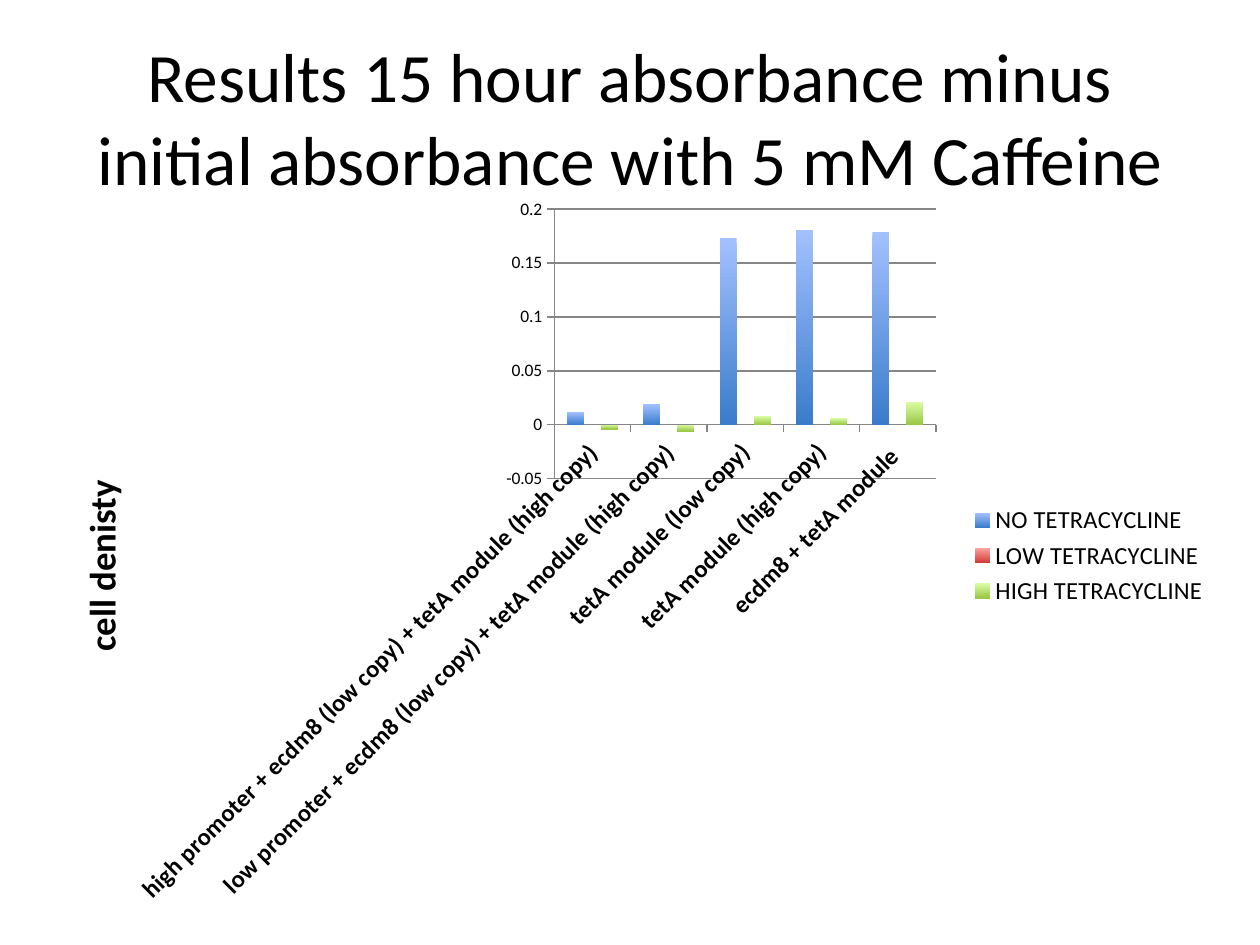
from lxml import etree
from pptx import Presentation
from pptx.chart.data import CategoryChartData
from pptx.dml.color import RGBColor
from pptx.enum.chart import XL_CHART_TYPE, XL_LEGEND_POSITION, XL_TICK_MARK
from pptx.enum.text import MSO_ANCHOR, MSO_AUTO_SIZE, PP_ALIGN
from pptx.oxml.ns import qn
from pptx.util import Inches, Pt

COLUMN = XL_CHART_TYPE.COLUMN_CLUSTERED
RIGHT = XL_LEGEND_POSITION.RIGHT
OUT = XL_TICK_MARK.OUTSIDE
MIDDLE = MSO_ANCHOR.MIDDLE
FIXED = MSO_AUTO_SIZE.NONE
CENTER = PP_ALIGN.CENTER

BLACK = RGBColor(0x00, 0x00, 0x00)
GRAY = RGBColor(0x86, 0x86, 0x86)
FONT = "Calibri"

# Chart frame, plot and axis title, in inches on the slide
LEFT, TOP, WIDTH, HEIGHT = 0.32, 1.55, 9.37, 5.72
PLOT = (4.4, 1.66, 3.03, 2.14)
LABEL = (0.55, 3.69)

CATS = [
    "high promoter + ecdm8 (low copy) + tetA module (high copy)",
    "low promoter + ecdm8 (low copy) + tetA module (high copy)",
    "tetA module (low copy)",
    "tetA module (high copy)",
    "ecdm8 + tetA module ",
]
# Name, values, top and bottom colour of the columns
SERIES = [
    ("NO TETRACYCLINE", (0.012, 0.019, 0.173, 0.181, 0.179),
     RGBColor(0xA3, 0xC1, 0xFF), RGBColor(0x3A, 0x7C, 0xCB)),
    ("LOW TETRACYCLINE", (0, 0, 0, 0, 0),
     RGBColor(0xFF, 0xA2, 0xA0), RGBColor(0xCE, 0x3B, 0x37)),
    ("HIGH TETRACYCLINE", (-0.004, -0.006, 0.008, 0.006, 0.021),
     RGBColor(0xDA, 0xFD, 0xA4), RGBColor(0x9A, 0xC7, 0x46)),
]


def write(frame, text, size, bold=False, align=CENTER):
    para = frame.paragraphs[0]
    para.alignment = align
    run = para.add_run()
    run.text = text
    style(run.font, size, bold)


def style(font, size, bold=False):
    font.name = FONT
    font.size = Pt(size)
    font.bold = bold
    font.color.rgb = BLACK


prs = Presentation()
prs.slide_width, prs.slide_height = Inches(10), Inches(7.5)
slide = prs.slides.add_slide(prs.slide_layouts[5])

# Title
title = slide.shapes.title
title.left, title.top = Inches(0.5), Inches(0.3)
title.width, title.height = Inches(9), Inches(1.25)
frame = title.text_frame
frame.word_wrap = True
frame.auto_size = FIXED
frame.vertical_anchor = MIDDLE
write(frame, "Results 15 hour absorbance minus initial absorbance "
      "with 5 mM Caffeine", 39.6)

# Chart
data = CategoryChartData()
data.categories = CATS
for name, vals, top, base in SERIES:
    data.add_series(name, vals)
chart = slide.shapes.add_chart(COLUMN, Inches(LEFT), Inches(TOP),
                               Inches(WIDTH), Inches(HEIGHT), data).chart
style(chart.font, 10)
chart.has_title = False

# Columns
plot = chart.plots[0]
plot.gap_width = 150
plot.overlap = 0
plot.vary_by_categories = False
for series, (name, vals, top, base) in zip(plot.series, SERIES):
    series.invert_if_negative = False
    fill = series.format.fill
    fill.gradient()
    fill.gradient_angle = 270
    for stop, color, place in zip(fill.gradient_stops, (top, base), (0, 1)):
        stop.color.rgb = color
        stop.position = place

# Axes
cat, val = chart.category_axis, chart.value_axis
for axis in (cat, val):
    axis.major_tick_mark = OUT
    axis.format.line.color.rgb = GRAY
style(cat.tick_labels.font, 14, True)
cat._element.txPr.bodyPr.set("rot", "-2700000")
style(val.tick_labels.font, 10)
val.minimum_scale, val.maximum_scale, val.major_unit = -0.05, 0.2, 0.05
val.has_major_gridlines = True
val.major_gridlines.format.line.color.rgb = GRAY
write(val.axis_title.text_frame, "cell denisty ", 21, bold=True)

# Legend
chart.has_legend = True
chart.legend.position = RIGHT
chart.legend.include_in_layout = False
style(chart.legend.font, 14)

# Fixed places of the plot and the axis title, as shares of the chart
area = chart._chartSpace.chart.plotArea
for part, index, box in ((area, 0, PLOT),
                         (val.axis_title._element, 1, LABEL)):
    for old in part.findall(qn("c:layout")):
        part.remove(old)
    layout = etree.Element(qn("c:layout"))
    part.insert(index, layout)
    manual = etree.SubElement(layout, qn("c:manualLayout"))
    if part is area:
        etree.SubElement(manual, qn("c:layoutTarget")).set("val", "inner")
    for tag in ("c:xMode", "c:yMode"):
        etree.SubElement(manual, qn(tag)).set("val", "edge")
    shares = ((box[0] - LEFT) / WIDTH, (box[1] - TOP) / HEIGHT)
    if part is area:
        shares += (box[2] / WIDTH, box[3] / HEIGHT)
    for tag, share in zip(("c:x", "c:y", "c:w", "c:h"), shares):
        etree.SubElement(manual, qn(tag)).set("val", str(round(share, 4)))

prs.save("out.pptx")
